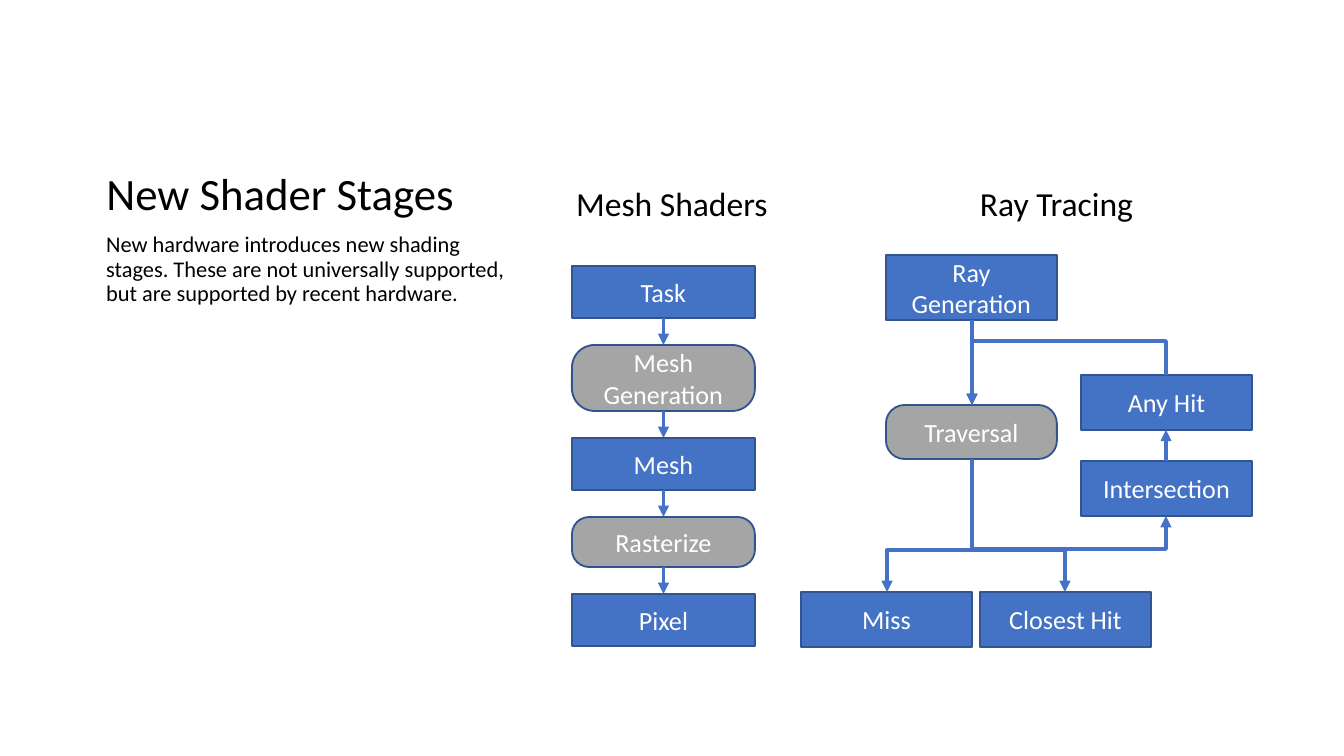
from lxml.etree import SubElement
from pptx import Presentation
from pptx.dml.color import RGBColor
from pptx.enum.shapes import MSO_CONNECTOR, MSO_SHAPE
from pptx.enum.text import MSO_ANCHOR, MSO_AUTO_SIZE, PP_ALIGN
from pptx.oxml.ns import qn
from pptx.util import Pt

BLUE = RGBColor(0x44, 0x72, 0xC4)
GRAY = RGBColor(0xA5, 0xA5, 0xA5)
OUTLINE = RGBColor(0x32, 0x54, 0x91)
BLACK = RGBColor(0, 0, 0)
WHITE = RGBColor(0xFF, 0xFF, 0xFF)
EMU_PER_PX = 914400 / 134.4


def px(length):
    return round(length * EMU_PER_PX)


class Diagram:
    """Holds the style and the current slide."""

    font = "Calibri"

    def __init__(self, page):
        self.page = page

    def set_text(self, box, text, size, color, align, anchor=MSO_ANCHOR.TOP):
        frame = box.text_frame
        frame.text = text
        frame.word_wrap = True
        frame.auto_size = MSO_AUTO_SIZE.NONE
        frame.vertical_anchor = anchor
        para = frame.paragraphs[0]
        para.alignment = align
        for span in para.runs:
            span.font.name = self.font
            span.font.size = Pt(size)
            span.font.color.rgb = color
        return para

    def title(self, text, left, top, width, height):
        box = self.page.shapes.title
        box.left, box.top, box.width, box.height = map(px, (left, top, width, height))
        para = self.set_text(box, text, 24, BLACK, PP_ALIGN.LEFT, MSO_ANCHOR.BOTTOM)
        para.line_spacing = 0.9

    def text(self, text, left, top, width, height, size, align=PP_ALIGN.LEFT):
        box = self.page.shapes.add_textbox(*map(px, (left, top, width, height)))
        return box, self.set_text(box, text, size, BLACK, align)

    def heading(self, text, left, top, width, height):
        box, _ = self.text(text, left, top, width, height, 18, PP_ALIGN.CENTER)
        box.text_frame.word_wrap = False

    def stage(self, text, left, top, width, height, fixed=False):
        """Blue box for a shader, gray rounded box for a fixed-function stage."""
        kind = MSO_SHAPE.ROUNDED_RECTANGLE if fixed else MSO_SHAPE.RECTANGLE
        box = self.page.shapes.add_shape(kind, *map(px, (left, top, width, height)))
        if fixed:
            box.adjustments[0] = 0.344
        box.shadow.inherit = False
        box.fill.solid()
        box.fill.fore_color.rgb = GRAY if fixed else BLUE
        box.line.color.rgb = OUTLINE
        box.line.width = Pt(1)
        self.set_text(box, text, 14, WHITE, PP_ALIGN.CENTER, MSO_ANCHOR.MIDDLE)

    def arrow(self, x1, y1, x2, y2, kind=MSO_CONNECTOR.STRAIGHT):
        line = self.page.shapes.add_connector(kind, *map(px, (x1, y1, x2, y2)))
        line.line.color.rgb = BLUE
        line.line.width = Pt(2)
        properties = line.element.spPr
        SubElement(properties.find(qn("a:ln")), qn("a:tailEnd"), type="triangle")
        SubElement(properties, qn("a:effectLst"))
        return line

    def bent_arrow(self, x1, y1, x2, y2, bend_y):
        """Arrow that leaves and arrives vertically, crossing over at bend_y."""
        # The preset runs sideways, so it is laid out flat and turned upright
        run, rise = abs(x2 - x1), y2 - y1
        left = (x1 + x2 - rise) / 2
        top = (y1 + y2 - run) / 2
        line = self.arrow(left, top, left + rise, top + run, MSO_CONNECTOR.ELBOW)
        properties = line.element.spPr
        frame = properties.find(qn("a:xfrm"))
        rightward = x2 > x1
        frame.set("rot", str((270 if rightward else 90) * 60000))
        if rightward:
            frame.set("flipH", "1")
        geometry = properties.find(qn("a:prstGeom"))
        guides = geometry.find(qn("a:avLst"))
        if guides is None:
            guides = SubElement(geometry, qn("a:avLst"))
        bend = round((bend_y - y1) / rise * 100000)
        SubElement(guides, qn("a:gd"), name="adj1", fmla=f"val {bend}")


def draw_mesh_pipeline(diagram):
    left, top, width, gap = 572, 266, 183, 27
    stages = [
        ("Task", 52, False),
        ("Mesh Generation", 66, True),
        ("Mesh", 52, False),
        ("Rasterize", 50, True),
        ("Pixel", 52, False),
    ]
    center = left + width / 2
    for index, (name, height, fixed) in enumerate(stages):
        if index:
            diagram.arrow(center, top - gap, center, top)
        diagram.stage(name, left, top, width, height, fixed)
        top += height + gap
    diagram.heading("Mesh Shaders", 562, 176, 220, 54)


def draw_ray_pipeline(diagram):
    width = 171
    stages = [
        ("Ray Generation", 886, 255, 65, False),
        ("Any Hit", 1081, 375, 55, False),
        ("Intersection", 1081, 461, 55, False),
        ("Traversal", 886, 405, 54, True),
        ("Miss", 801, 592, 55, False),
        ("Closest Hit", 980, 592, 55, False),
    ]
    for name, left, top, height, fixed in stages:
        diagram.stage(name, left, top, width, height, fixed)

    main_x, side_x, miss_x, closest_x = 972, 1166, 887, 1065
    diagram.arrow(main_x, 320, main_x, 405)
    diagram.arrow(side_x, 461, side_x, 430)
    diagram.bent_arrow(side_x, 375, main_x, 405, 341)
    diagram.bent_arrow(main_x, 459, side_x, 516, 549)
    for target_x in (miss_x, closest_x):
        diagram.bent_arrow(main_x, 459, target_x, 592, 550)
    diagram.heading("Ray Tracing", 966, 176, 181, 54)


def main():
    deck = Presentation()
    deck.slide_width, deck.slide_height = px(1344), px(756)
    diagram = Diagram(deck.slides.add_slide(deck.slide_layouts[5]))

    # Title and introduction
    diagram.title("New Shader Stages", 93, 51, 434, 176)
    _, para = diagram.text(
        "New hardware introduces new shading stages. These are not universally "
        "supported, but are supported by recent hardware.",
        93, 227, 434, 421, 12)
    para.line_spacing = 0.9
    para.space_before = Pt(7.5)

    # The two pipelines
    draw_mesh_pipeline(diagram)
    draw_ray_pipeline(diagram)
    deck.save("out.pptx")


if __name__ == "__main__":
    main()
